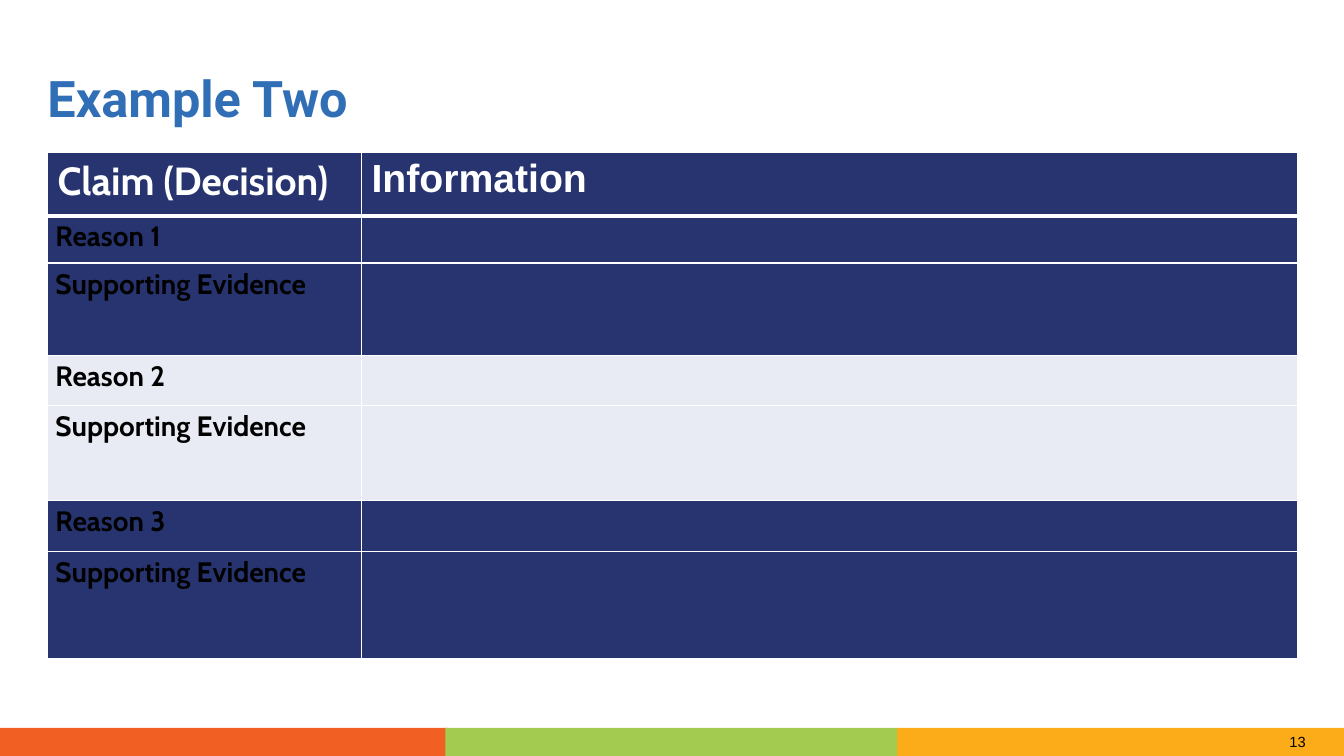
import pptx
import pptx.dml.color
import pptx.enum.shapes
import pptx.enum.text
import pptx.oxml.ns
import pptx.util
from lxml import etree

COLORS = {
    "white": "FFFFFF", "black": "000000", "blue": "306EB6", "navy": "27346F",
    "pale": "E8EBF3", "orange": "F15F22", "green": "A2CB4F", "amber": "FBAC18",
}
MARGIN, CONTENT_WIDTH = 3.53, 93.02
FOOTER_TOP, FOOTER_HEIGHT = 96.27, 3.73
TITLE_ONLY = 5


def add_xml(parent, tag, **attributes):
    return etree.SubElement(parent, pptx.oxml.ns.qn(tag), attributes)


class SlideBuilder:
    """Places styled elements; all lengths are percentages of the slide's size."""

    def __init__(self, presentation):
        self.width = presentation.slide_width
        self.height = presentation.slide_height
        self.slide = presentation.slides.add_slide(presentation.slide_layouts[TITLE_ONLY])

    def across(self, share):
        return round(self.width * share / 100)

    def down(self, share):
        return round(self.height * share / 100)

    def box(self, left, top, width, height):
        return self.across(left), self.down(top), self.across(width), self.down(height)

    def paint(self, fill, color, opacity=100):
        fill.solid()
        fill.fore_color.rgb = pptx.dml.color.RGBColor.from_string(COLORS[color])
        if opacity < 100:
            tone = fill._xPr.find(".//" + pptx.oxml.ns.qn("a:srgbClr"))
            add_xml(tone, "a:alpha", val=str(opacity * 1000))

    def set_text(self, frame, text, font, size, color, bold=False):
        frame.text = text
        style = frame.paragraphs[0].runs[0].font
        style.name, style.size, style.bold = font, pptx.util.Pt(size), bold
        style.color.rgb = pptx.dml.color.RGBColor.from_string(COLORS[color])

    def title(self, text, *place):
        heading = self.slide.shapes.title
        heading.left, heading.top, heading.width, heading.height = self.box(*place)
        frame = heading.text_frame
        frame.margin_left = frame.margin_right = frame.margin_top = frame.margin_bottom = 0
        frame.auto_size = pptx.enum.text.MSO_AUTO_SIZE.NONE
        frame.vertical_anchor = pptx.enum.text.MSO_ANCHOR.MIDDLE
        self.set_text(frame, text, "Roboto", 36, "blue", bold=True)
        frame.paragraphs[0].alignment = pptx.enum.text.PP_ALIGN.LEFT
        frame.paragraphs[0].line_spacing = 0.9

    def band(self, color, *place):
        stripe = self.slide.shapes.add_shape(
            pptx.enum.shapes.MSO_SHAPE.RECTANGLE, *self.box(*place))
        stripe.shadow.inherit = False
        stripe.line.fill.background()
        self.paint(stripe.fill, color)

    def page_number(self, text, *place):
        number = self.slide.shapes.add_textbox(*self.box(*place))
        self.set_text(number.text_frame, text, "Arial", 10.5, "black")

    def borders(self, cell, **widths):
        """Draw white cell borders, 1 pt unless a side (L, R, T, B) is given."""
        properties = cell._tc.get_or_add_tcPr()
        for side in "LRTB":
            line = add_xml(properties, "a:ln" + side,
                           w=str(int(pptx.util.Pt(widths.get(side, 1)))))
            add_xml(add_xml(line, "a:solidFill"), "a:srgbClr", val=COLORS["white"])

    def table(self, header, rows, columns, left, top):
        """Each row is (label, height, fill colour, opacity)."""
        header_texts, header_height = header
        heights = [header_height] + [height for _, height, _, _ in rows]
        grid = self.slide.shapes.add_table(
            len(heights), len(columns),
            *self.box(left, top, sum(columns), sum(heights))).table
        grid.horz_banding = False
        for column, share in zip(grid.columns, columns):
            column.width = self.across(share)
        for row, share in zip(grid.rows, heights):
            row.height = self.down(share)

        for cell, (text, font) in zip(grid.rows[0].cells, header_texts):
            self.borders(cell, B=3)
            self.paint(cell.fill, "navy")
            self.set_text(cell.text_frame, text, font, 28, "white", bold=True)

        for index, (label, _, color, opacity) in enumerate(rows, start=1):
            for cell in grid.rows[index].cells:
                self.borders(cell, T=3 if index == 1 else 1)
                self.paint(cell.fill, color, opacity)
            label_cell = grid.cell(index, 0)
            label_cell.margin_left = label_cell.margin_right = pptx.util.Inches(0.08)
            label_cell.margin_top = label_cell.margin_bottom = pptx.util.Inches(0.04)
            self.set_text(label_cell.text_frame, label, "Cabin", 20, "black", bold=True)


def main():
    presentation = pptx.Presentation()
    presentation.slide_width = pptx.util.Inches(13.33)
    presentation.slide_height = pptx.util.Inches(7.5)
    builder = SlideBuilder(presentation)

    for color, left, width in [("amber", 66.67, 33.33), ("orange", 0, 33.33),
                               ("green", 33.15, 33.6)]:
        builder.band(color, left, FOOTER_TOP, width, FOOTER_HEIGHT)
    builder.page_number("13", 95.2, FOOTER_TOP, 2.85, FOOTER_HEIGHT)

    builder.title("Example Two", MARGIN, 10.27, CONTENT_WIDTH, 6.27)

    reasons = [(6.27, 12.27, "navy", 20), (6.53, 12.67, "pale", 100),
               (6.67, 14.13, "navy", 20)]
    rows = []
    for number, (reason, evidence, color, opacity) in enumerate(reasons, start=1):
        rows.append((f"Reason {number}", reason, color, opacity))
        rows.append(("Supporting Evidence", evidence, color, opacity))
    header = [("Claim (Decision)", "Cabin"), ("Information", "Arial")], 8.4
    label_width = 23.37
    builder.table(header, rows, [label_width, CONTENT_WIDTH - label_width], MARGIN, 20.13)

    presentation.save("out.pptx")


if __name__ == "__main__":
    main()
